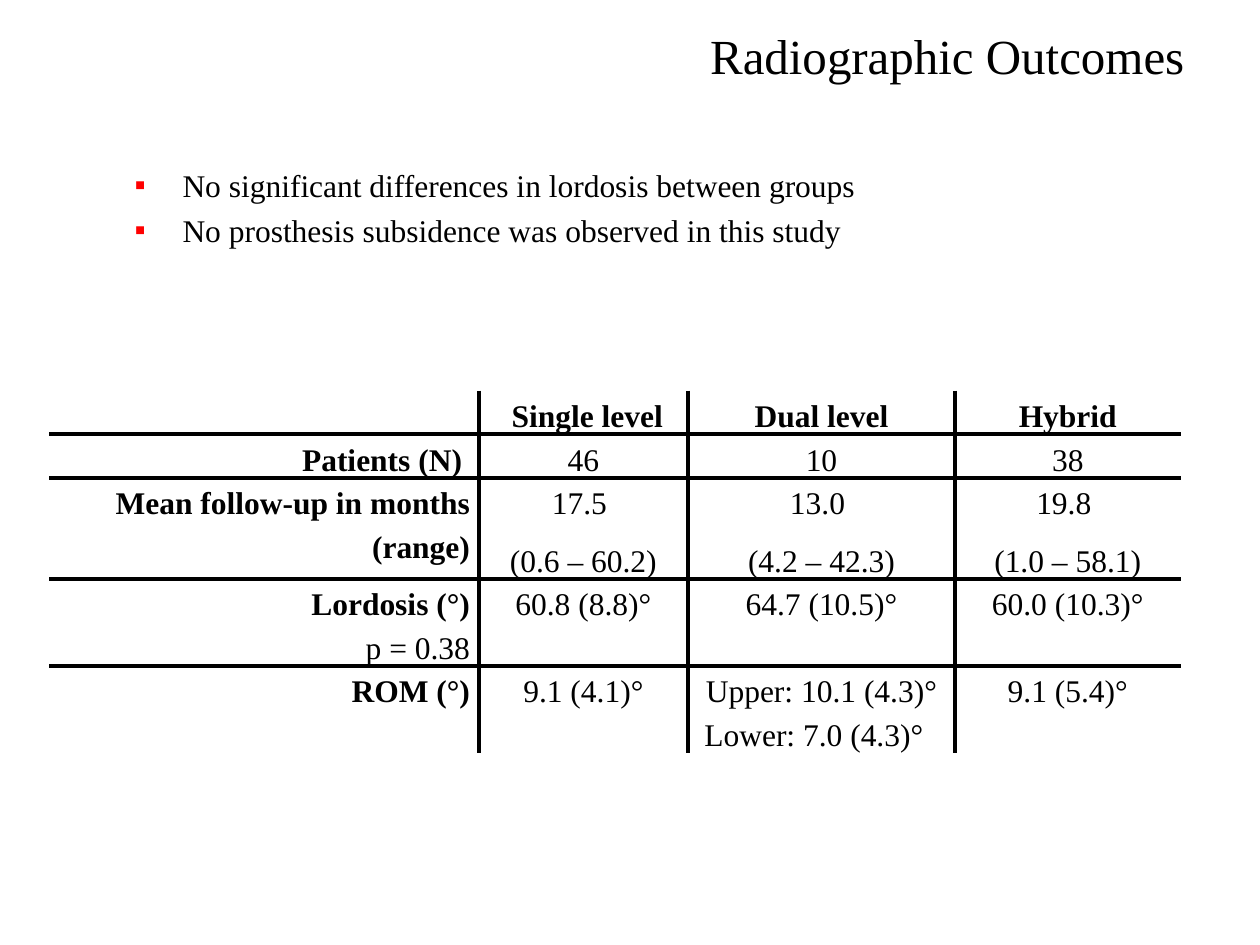
import pptx
import pptx.util
import pptx.dml.color
import pptx.enum.text
import pptx.oxml
import pptx.oxml.ns

Inches, Pt = pptx.util.Inches, pptx.util.Pt
ALIGN = pptx.enum.text.PP_ALIGN
ANCHOR = pptx.enum.text.MSO_ANCHOR

# Content
TITLE = "Radiographic Outcomes"
BULLETS = [
    "No significant differences in lordosis between groups",
    "No prosthesis subsidence was observed in this study",
]
ROWS = [
    ["", " Single level", "Dual level", "Hybrid"],
    ["Patients (N) ", "46", "10", "38"],
    ["Mean follow-up in months (range)", "17.5 \n(0.6 – 60.2)",
     "13.0 \n(4.2 – 42.3)", "19.8 \n(1.0 – 58.1)"],
    ["Lordosis (°)", "60.8 (8.8)°", "64.7 (10.5)°", "60.0 (10.3)°"],
    ["p = 0.38", "", "", ""],
    ["ROM (°)", "9.1 (4.1)°", "Upper: 10.1 (4.3)°", "9.1 (5.4)°"],
    ["", "", "Lower: 7.0 (4.3)°", ""],
]
COL_WIDTHS = [3.41, 1.66, 2.12, 1.79]
ROW_HEIGHT = 0.21
RULED_ROWS = {0, 1, 2, 4}  # rows with a line below
PLAIN_LABELS = {"p = 0.38"}
COLORS = {"text": "000000", "line": "000000", "bullet": "FF0000"}
FONT = "Times New Roman"


def style_runs(p, size, bold=False):
    for r in p.runs:
        r.font.name, r.font.size, r.font.bold = FONT, Pt(size), bold
        r.font.color.rgb = pptx.dml.color.RGBColor.from_string(COLORS["text"])


def set_borders(cell, sides):
    """Draw the given sides (letters of LRTB) and clear the others."""
    tc_pr = cell._tc.get_or_add_tcPr()
    for i, side in enumerate("LRTB"):
        fill = (f'<a:solidFill><a:srgbClr val="{COLORS["line"]}"/></a:solidFill>'
                if side in sides else "<a:noFill/>")
        tc_pr.insert(i, pptx.oxml.parse_xml(
            f'<a:ln{side} {pptx.oxml.ns.nsdecls("a")} w="{Pt(2.25)}">{fill}</a:ln{side}>'))


def add_bullet(p):
    p_pr = p._p.get_or_add_pPr()
    p_pr.set("marL", str(Inches(0.38)))
    p_pr.set("indent", str(-Inches(0.38)))
    ns = pptx.oxml.ns.nsdecls("a")
    for xml in (f'<a:buClr {ns}><a:srgbClr val="{COLORS["bullet"]}"/></a:buClr>',
                f'<a:buFont {ns} typeface="{FONT}"/>',
                f'<a:buChar {ns} char="▪"/>'):
        p_pr.append(pptx.oxml.parse_xml(xml))


prs = pptx.Presentation()
prs.slide_width, prs.slide_height = Inches(10), Inches(7.5)
s = prs.slides.add_slide(prs.slide_layouts[5])

# Title
title = s.shapes.title
title.left, title.top = Inches(2.97), Inches(0)
title.width, title.height = Inches(6.53), Inches(0.87)
tf = title.text_frame
tf.text = TITLE
tf.vertical_anchor = ANCHOR.MIDDLE
tf.paragraphs[0].alignment = ALIGN.RIGHT
style_runs(tf.paragraphs[0], 28)

# Outcome table
table = s.shapes.add_table(
    len(ROWS), len(COL_WIDTHS), Inches(0.39), Inches(3.1),
    Inches(sum(COL_WIDTHS)), Inches(ROW_HEIGHT * len(ROWS))).table
table.first_row = table.horz_banding = False
for col, width in zip(table.columns, COL_WIDTHS):
    col.width = Inches(width)
for i, row in enumerate(ROWS):
    table.rows[i].height = Inches(ROW_HEIGHT)
    for j, text in enumerate(row):
        cell = table.cell(i, j)
        cell.margin_left = cell.margin_right = Inches(0.07)
        cell.margin_top = cell.margin_bottom = 0
        cell.fill.background()
        set_borders(cell, ("L" if j > 0 else "")
                    + ("R" if j < len(row) - 1 else "")
                    + ("T" if i - 1 in RULED_ROWS else "")
                    + ("B" if i in RULED_ROWS else ""))
        cell.text_frame.text = text
        for p in cell.text_frame.paragraphs:
            p.alignment = ALIGN.CENTER if j else ALIGN.RIGHT
            p.line_spacing, p.space_after = 1.25, Pt(8)
            style_runs(p, 18, (i == 0 or j == 0) and text not in PLAIN_LABELS)
# The lower value sits slightly left of centre
table.cell(6, 2).margin_right = Inches(0.19)

# Bullets
tf = s.shapes.add_textbox(Inches(0.97), Inches(1.27), Inches(8.58), Inches(1.48)).text_frame
tf.word_wrap = True
tf.text = "\n".join(BULLETS)
for i, p in enumerate(tf.paragraphs):
    add_bullet(p)
    p.space_before = Pt(4 if i else 0)
    style_runs(p, 18)

prs.save("out.pptx")
